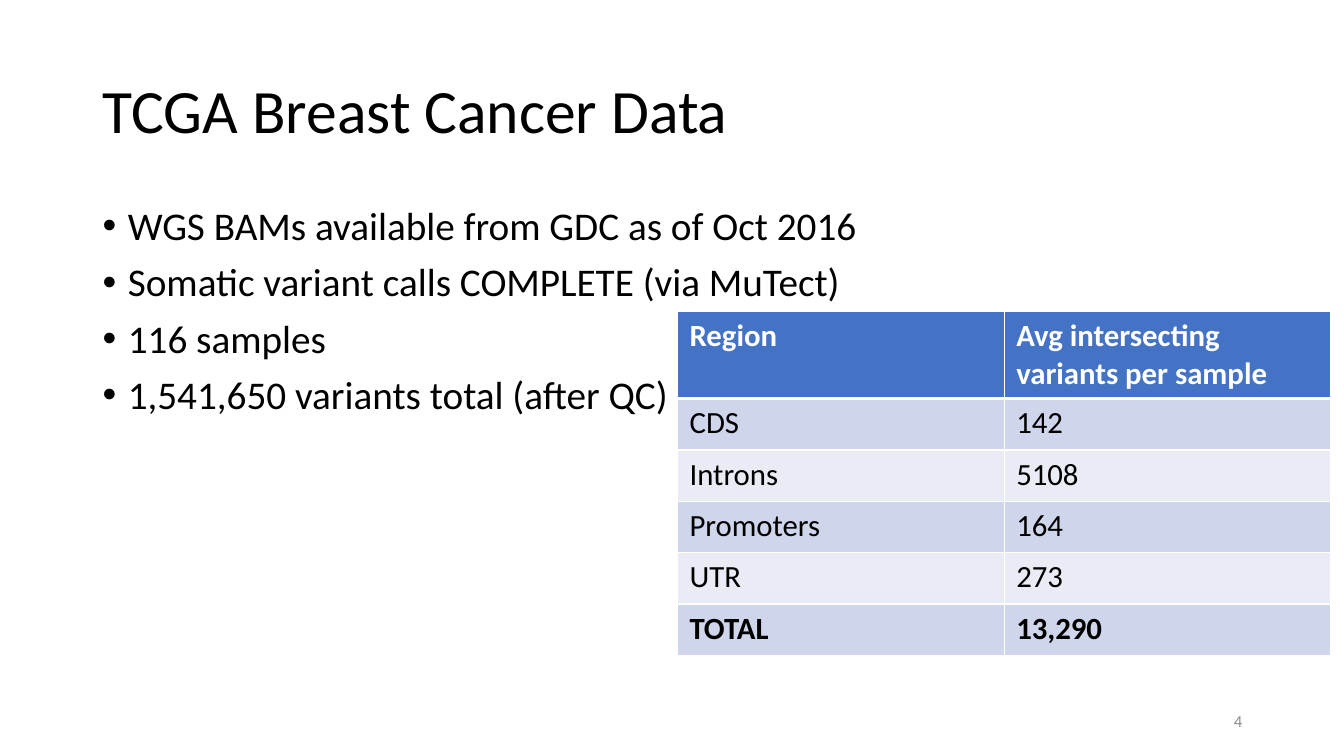
from lxml import etree
from pptx import Presentation
from pptx.dml.color import RGBColor
from pptx.enum import text
from pptx.oxml import ns
from pptx.util import Inches, Pt

# Content
TITLE = "TCGA Breast Cancer Data"
BULLETS = [
    "WGS BAMs available from GDC as of Oct 2016",
    "Somatic variant calls COMPLETE (via MuTect)",
    "116 samples",
    "1,541,650 variants total (after QC)",
]
REGIONS = [
    ("Region", "Avg intersecting variants per sample"),
    ("CDS", "142"),
    ("Introns", "5108"),
    ("Promoters", "164"),
    ("UTR", "273"),
    ("TOTAL", "13,290"),
]
SLIDE_NUMBER = "4"

# Format
COLORS = {
    "text": "000000",
    "number": "8C8C8C",
    "header": "4472C4",
    "odd": "CFD5EA",
    "even": "E9EBF5",
    "white": "FFFFFF",
}
TITLE_BOX = (0.92, 0.4, 11.5, 1.45)
BULLET_BOX = (0.92, 2, 11.5, 4.76)
NUMBER_BOX = (9.42, 6.95, 3, 0.4)
TABLE_LEFT, TABLE_TOP = 6.72, 3.09
COLUMN_WIDTH, HEADER_HEIGHT, ROW_HEIGHT = 3.24, 0.86, 0.51
FRAME = {
    "word_wrap": True,
    "auto_size": text.MSO_AUTO_SIZE.NONE,
    "margin_left": Inches(0.1),
    "margin_right": Inches(0.1),
    "margin_top": Inches(0.05),
    "margin_bottom": Inches(0.05),
}
CELL = {
    "margin_left": Inches(0.12),
    "margin_right": Inches(0.12),
    "margin_top": Inches(0.06),
    "margin_bottom": Inches(0.06),
}


def apply(target, values):
    for name, value in values.items():
        setattr(target, name, value)


def write(paragraph, words, size, color="text", bold=False, **layout):
    run = paragraph.add_run()
    run.text = words
    apply(run.font, {"name": "Calibri", "size": Pt(size), "bold": bold})
    run.font.color.rgb = RGBColor.from_string(COLORS[color])
    apply(paragraph, {"alignment": text.PP_ALIGN.LEFT, **layout})


def add_bullet(paragraph):
    properties = paragraph._p.get_or_add_pPr()
    properties.set("marL", str(Inches(0.25)))
    properties.set("indent", str(-Inches(0.25)))
    etree.SubElement(properties, ns.qn("a:buFont"), typeface="Arial")
    etree.SubElement(properties, ns.qn("a:buChar"), char="•")


def add_borders(cell, widths):
    properties = cell._tc.get_or_add_tcPr()
    for side, width in widths.items():
        line = etree.SubElement(properties, ns.qn(f"a:ln{side}"), w=str(Pt(width)))
        fill = etree.SubElement(line, ns.qn("a:solidFill"))
        etree.SubElement(fill, ns.qn("a:srgbClr"), val=COLORS["white"])


def add_text_box(slide, box, **frame):
    text_frame = slide.shapes.add_textbox(*map(Inches, box)).text_frame
    apply(text_frame, {**FRAME, **frame})
    return text_frame


presentation = Presentation()
presentation.slide_width, presentation.slide_height = Inches(13.33), Inches(7.5)
slide = presentation.slides.add_slide(presentation.slide_layouts[5])

# Title
title = slide.shapes.title
apply(title, dict(zip(("left", "top", "width", "height"), map(Inches, TITLE_BOX))))
apply(title.text_frame, {**FRAME, "vertical_anchor": text.MSO_ANCHOR.MIDDLE})
write(title.text_frame.paragraphs[0], TITLE, 44, line_spacing=0.9)

# Bullets
body = add_text_box(slide, BULLET_BOX)
for index, words in enumerate(BULLETS):
    paragraph = body.add_paragraph() if index else body.paragraphs[0]
    write(paragraph, words, 28, line_spacing=0.9, space_before=Pt(10))
    add_bullet(paragraph)

# Slide number
number = add_text_box(slide, NUMBER_BOX, vertical_anchor=text.MSO_ANCHOR.MIDDLE)
write(number.paragraphs[0], SLIDE_NUMBER, 12, "number", alignment=text.PP_ALIGN.RIGHT)

# Table of regions
heights = [HEADER_HEIGHT] + [ROW_HEIGHT] * (len(REGIONS) - 1)
columns = len(REGIONS[0])
table = slide.shapes.add_table(
    len(REGIONS), columns, Inches(TABLE_LEFT), Inches(TABLE_TOP),
    Inches(COLUMN_WIDTH * columns), Inches(sum(heights)),
).table
for column in table.columns:
    column.width = Inches(COLUMN_WIDTH)
for index, values in enumerate(REGIONS):
    table.rows[index].height = Inches(heights[index])
    is_header = index == 0
    is_total = index == len(REGIONS) - 1
    fill = "header" if is_header else ("even", "odd")[index % 2]
    top, bottom = 3 if index == 1 else 1, 3 if is_header else 1
    for cell, words in zip(table.rows[index].cells, values):
        apply(cell, CELL)
        add_borders(cell, {"L": 1, "R": 1, "T": top, "B": bottom})
        cell.fill.solid()
        cell.fill.fore_color.rgb = RGBColor.from_string(COLORS[fill])
        write(cell.text_frame.paragraphs[0], words, 22,
              "white" if is_header else "text", is_header or is_total)

presentation.save("out.pptx")
